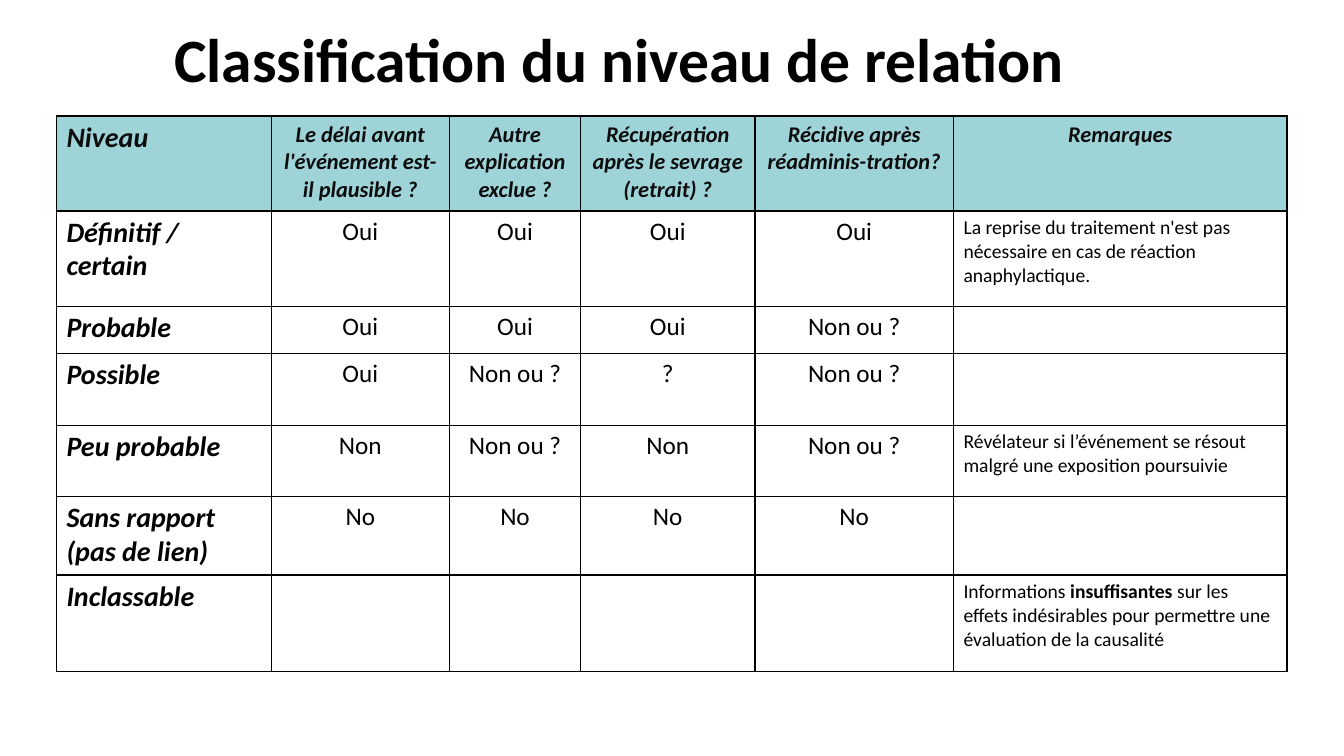
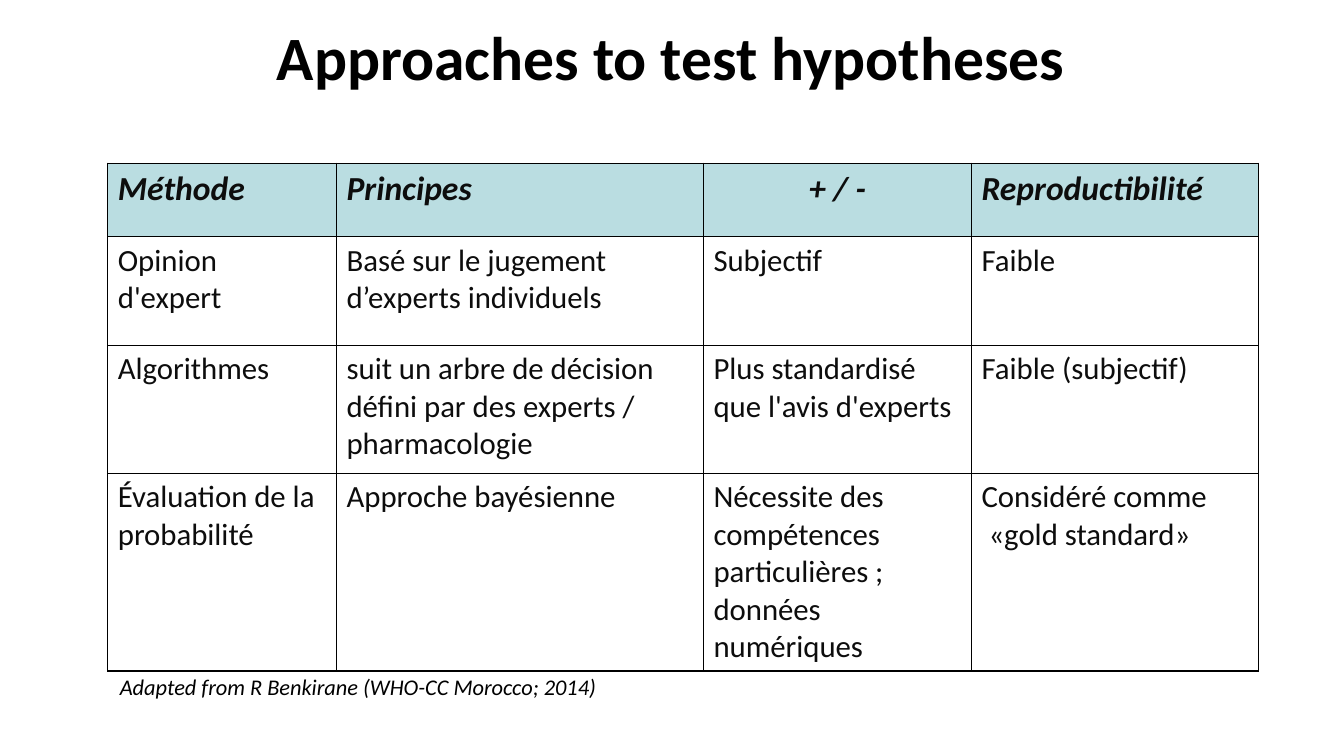
import dataclasses

import pptx
import pptx.dml.color
import pptx.enum.text
import pptx.oxml
import pptx.oxml.ns
import pptx.util

Pt = pptx.util.Pt
LEFT = pptx.enum.text.PP_ALIGN.LEFT
CENTER = pptx.enum.text.PP_ALIGN.CENTER
MIDDLE = pptx.enum.text.MSO_ANCHOR.MIDDLE
NO_AUTOFIT = pptx.enum.text.MSO_AUTO_SIZE.NONE

FONT = "Calibri"
BLACK = "000000"
INK = "0D0D0D"
TITLE_ONLY = 5


@dataclasses.dataclass
class TextStyle:
    size: float
    color: str = BLACK
    bold: bool = False
    italic: bool = False
    align: int = LEFT
    line_spacing: float = None


TITLE = TextStyle(44, bold=True, align=CENTER)
SOURCE = TextStyle(16, italic=True)

LEVEL_HEADING = TextStyle(20, INK, True, True)
QUESTION_HEADING = TextStyle(16, INK, True, True, CENTER)
LEVEL = TextStyle(20, bold=True, italic=True, line_spacing=24)
ANSWER = TextStyle(18, align=CENTER)
REMARK = TextStyle(14)

METHOD_HEADING = TextStyle(24, INK, True, True)
BALANCE_HEADING = dataclasses.replace(METHOD_HEADING, align=CENTER)
METHOD_TEXT = TextStyle(22, INK)

LEVEL_ROWS = [
    ["Niveau", "Le délai avant l'événement est-il plausible ?", "Autre explication exclue ?",
     "Récupération après le sevrage (retrait) ?", "Récidive après réadminis-tration?", "Remarques"],
    ["Définitif / certain", "Oui", "Oui", "Oui", "Oui",
     "La reprise du traitement n'est pas nécessaire en cas de réaction anaphylactique."],
    ["Probable", "Oui", "Oui", "Oui", "Non ou ?", ""],
    ["Possible", "Oui", "Non ou ?", "?", "Non ou ?", ""],
    ["Peu probable", "Non", "Non ou ?", "Non", "Non ou ?",
     "Révélateur si l’événement se résout malgré une exposition poursuivie"],
    ["Sans rapport (pas de lien)", "No", "No", "No", "No", ""],
    ["Inclassable", "", "", "", "",
     "Informations **insuffisantes **sur les effets indésirables pour permettre une "
     "évaluation de la causalité"],
]

METHOD_ROWS = [
    ["Méthode", "Principes", "+ / -", "Reproductibilité"],
    ["Opinion d'expert", "Basé sur le jugement d’experts individuels", "Subjectif", "Faible"],
    ["Algorithmes", "suit un arbre de décision défini par des experts / pharmacologie",
     "Plus standardisé que l'avis d'experts", "Faible (subjectif)"],
    ["Évaluation de la probabilité", "Approche bayésienne",
     "Nécessite des compétences particulières ; données numériques",
     "Considéré comme\n «gold standard»"],
]


def rgb(color):
    return pptx.dml.color.RGBColor.from_string(color)


def write(frame, text, style):
    """Fill a text frame; words between double asterisks are bold."""
    frame.text = text.replace("**", "")
    for para, line in zip(frame.paragraphs, text.split("\n")):
        para.alignment = style.align
        if style.line_spacing:
            para.line_spacing = Pt(style.line_spacing)
        pieces = line.split("**")
        if len(pieces) > 1:
            para.clear()
            for piece in pieces:
                para.add_run().text = piece
        for index, span in enumerate(para.runs):
            span.font.name = FONT
            span.font.size = Pt(style.size)
            span.font.bold = style.bold or index % 2 == 1
            span.font.italic = style.italic
            span.font.color.rgb = rgb(style.color)


def add_page(deck, title, left, top, width, height):
    page = deck.slides.add_slide(deck.slide_layouts[TITLE_ONLY])
    box = page.shapes.title
    box.left, box.top, box.width, box.height = Pt(left), Pt(top), Pt(width), Pt(height)
    write(box.text_frame, title, TITLE)
    box.text_frame.vertical_anchor = MIDDLE
    box.text_frame.auto_size = NO_AUTOFIT
    return page


def add_cell_borders(cell):
    properties = cell._tc.get_or_add_tcPr()
    for position, side in enumerate(("lnL", "lnR", "lnT", "lnB")):
        border = pptx.oxml.parse_xml(
            f'<a:{side} {pptx.oxml.ns.nsdecls("a")} w="{Pt(1)}"><a:solidFill>'
            f'<a:srgbClr val="{BLACK}"/></a:solidFill></a:{side}>')
        properties.insert(position, border)


def add_grid(page, left, top, widths, heights, rows, heading_styles, body_styles, heading_fill):
    """Draw a ruled table with one style per column for its heading and its body."""
    frame = page.shapes.add_table(len(rows), len(widths), Pt(left), Pt(top),
                                  Pt(sum(widths)), Pt(sum(heights)))
    table = frame.table
    table.first_row = table.horz_banding = False
    for column, width in zip(table.columns, widths):
        column.width = Pt(width)
    for row_index, (row, height, texts) in enumerate(zip(table.rows, heights, rows)):
        row.height = Pt(height)
        styles = body_styles if row_index else heading_styles
        for cell, text, style in zip(row.cells, texts, styles):
            write(cell.text_frame, text, style)
            if row_index:
                cell.fill.background()
            else:
                cell.fill.solid()
                cell.fill.fore_color.rgb = rgb(heading_fill)
            add_cell_borders(cell)


def add_source(page, text, left, top, width, height):
    box = page.shapes.add_textbox(Pt(left), Pt(top), Pt(width), Pt(height))
    box.text_frame.word_wrap = False
    write(box.text_frame, text, SOURCE)


def build_levels_page(deck):
    page = add_page(deck, "Classification du niveau de relation", 88.5, 5, 708.5, 72)
    add_grid(page, 40.3, 82.8,
             widths=[153.4, 127.4, 93.6, 124.6, 141.8, 238.3],
             heights=[68, 68, 34, 51, 51, 56, 69],
             rows=LEVEL_ROWS,
             heading_styles=[LEVEL_HEADING] + [QUESTION_HEADING] * 5,
             body_styles=[LEVEL] + [ANSWER] * 4 + [REMARK],
             heading_fill="9ED3D7")


def build_methods_page(deck):
    page = add_page(deck, "Approaches to test hypotheses", 162, 3.6, 635, 72)
    add_grid(page, 77, 116.6,
             widths=[163.4, 262.1, 191.5, 205.2],
             heights=[52.5, 77.8, 91.4, 141],
             rows=METHOD_ROWS,
             heading_styles=[METHOD_HEADING, METHOD_HEADING, BALANCE_HEADING, METHOD_HEADING],
             body_styles=[METHOD_TEXT] * 4,
             heading_fill="BADDE1")
    add_source(page, "Adapted from R Benkirane (WHO-CC Morocco; 2014)", 78.5, 477.4, 359.3, 26.6)


def main():
    deck = pptx.Presentation()
    deck.slide_width, deck.slide_height = Pt(960), Pt(540)
    build_levels_page(deck)
    build_methods_page(deck)
    deck.save("out.pptx")


if __name__ == "__main__":
    main()
